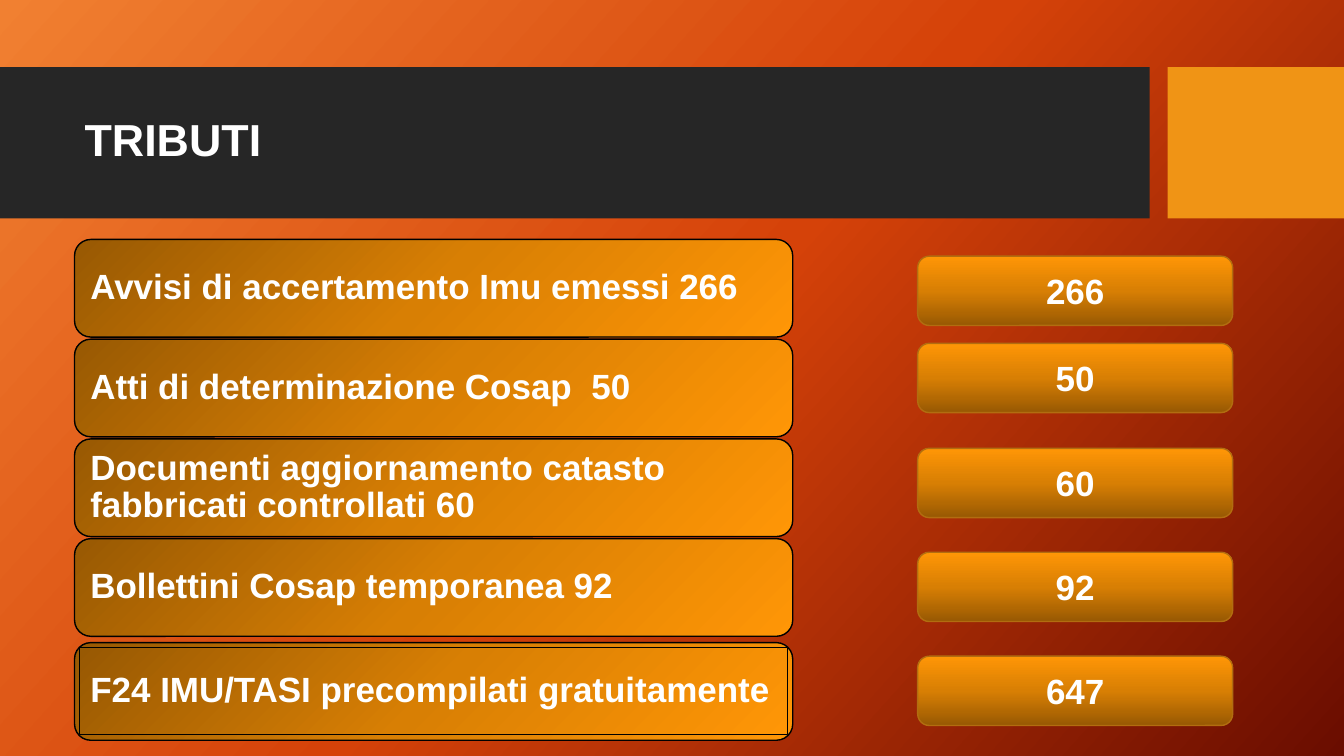
from lxml import etree
from pptx import Presentation
from pptx.dml.color import RGBColor
from pptx.enum.shapes import MSO_SHAPE
from pptx.enum.text import MSO_ANCHOR, MSO_AUTO_SIZE, PP_ALIGN
from pptx.oxml.ns import qn
from pptx.util import Pt

PX = 9525
RECTANGLE, ROUNDED = MSO_SHAPE.RECTANGLE, MSO_SHAPE.ROUNDED_RECTANGLE
LEFT, CENTER, MIDDLE = PP_ALIGN.LEFT, PP_ALIGN.CENTER, MSO_ANCHOR.MIDDLE
NO_AUTOFIT = MSO_AUTO_SIZE.NONE

FONT = "Arial"
WHITE = RGBColor(0xFF, 0xFF, 0xFF)
BLACK = RGBColor(0x00, 0x00, 0x00)
CHARCOAL = RGBColor(0x26, 0x26, 0x26)
ORANGE = RGBColor(0xF0, 0x94, 0x15)
BRONZE = RGBColor(0xB2, 0x6D, 0x10)
AMBER_STOPS = (RGBColor(0x98, 0x59, 0x03), RGBColor(0xD8, 0x7F, 0x04), RGBColor(0xFF, 0x96, 0x06))
FIRE_STOPS = (RGBColor(0xF1, 0x80, 0x31), RGBColor(0xD5, 0x42, 0x09), RGBColor(0x6A, 0x0D, 0x00))

LABELS = (
    "Avvisi di accertamento Imu emessi 266",
    "Atti di determinazione Cosap\t 50",
    "Documenti aggiornamento catasto fabbricati controllati 60",
    "Bollettini Cosap temporanea 92",
)
FORM_LABEL = "F24 IMU/TASI precompilati gratuitamente"
COUNTS = ((244, "266"), (327, "50"), (427, "60"), (526, "92"), (625, "647"))
CARD_LEFT, CARD_TOP, CARD_WIDTH, CARD_HEIGHT, CARD_STEP = 71, 228, 684, 93, 95
FORM_TOP = 612
INNER_MARGIN, TEXT_INSET, TAB_SIZE = 5, 10, 117


def emu(*lengths):
    """Turn px lengths into EMU."""
    return [length * PX for length in lengths]


def set_gradient(fill, element, colors, angle=None):
    """Spread colors evenly, along an angle or outwards from the top left corner."""
    fill.gradient()
    gradient = element.find(".//" + qn("a:gradFill"))
    for child in list(gradient):
        gradient.remove(child)
    stops = etree.SubElement(gradient, qn("a:gsLst"))
    for index, color in enumerate(colors):
        position = 100000 * index // (len(colors) - 1)
        stop = etree.SubElement(stops, qn("a:gs"), pos=str(position))
        etree.SubElement(stop, qn("a:srgbClr"), val=str(color))
    if angle is None:
        radial = etree.SubElement(gradient, qn("a:path"), path="circle")
        etree.SubElement(radial, qn("a:fillToRect"), r="100000", b="100000")
    else:
        etree.SubElement(gradient, qn("a:lin"), ang=str(angle * 60000), scaled="0")


def write_text(shape, text, size, alignment, line_spacing=1.0):
    """Put bold white text in the vertical middle of a shape."""
    frame = shape.text_frame
    frame.text = text
    frame.word_wrap = True
    frame.auto_size = NO_AUTOFIT
    frame.vertical_anchor = MIDDLE
    paragraph = frame.paragraphs[0]
    paragraph.alignment = alignment
    paragraph.line_spacing = line_spacing
    font = paragraph.runs[0].font
    font.name, font.size, font.bold = FONT, Pt(size), True
    font.color.rgb = WHITE


def add_block(slide, kind, box, color):
    """Add a plain filled shape without outline or shadow."""
    shape = slide.shapes.add_shape(kind, *emu(*box))
    shape.shadow.inherit = False
    shape.fill.solid()
    shape.fill.fore_color.rgb = color
    shape.line.fill.background()
    return shape


def add_amber_block(slide, kind, box, line_color, line_width=1, angle=None):
    """Add an outlined shape with the amber gradient."""
    shape = add_block(slide, kind, box, ORANGE)
    set_gradient(shape.fill, shape.element, AMBER_STOPS, angle)
    shape.line.color.rgb = line_color
    shape.line.width = Pt(line_width)
    return shape


def add_header(slide, box, text):
    """Draw the dark band, its accent block and the title."""
    left, top, width, height = box
    band_width, accent_width = 1095, 168
    add_block(slide, RECTANGLE, (left, top, band_width, height), CHARCOAL)
    accent_left = left + width - accent_width
    add_block(slide, RECTANGLE, (accent_left, top, accent_width, height), ORANGE)
    title = slide.shapes.title
    title.element.getparent().append(title.element)
    title.left, title.top, title.width, title.height = emu(left + 71, top + 15, 1009, 113)
    write_text(title, text, 32, LEFT, 0.9)


def add_card(slide, box, text, framed=False):
    """Draw a rounded label card with its text area, optionally framed."""
    left, top, width, height = box
    add_amber_block(slide, ROUNDED, box, BLACK)
    inner = (left + INNER_MARGIN, top + INNER_MARGIN,
             width - 2 * INNER_MARGIN, height - 2 * INNER_MARGIN)
    if framed:
        area = add_amber_block(slide, RECTANGLE, inner, BLACK, 0.75)
    else:
        area = slide.shapes.add_textbox(*emu(*inner))
    write_text(area, text, 25, LEFT, 0.9)
    frame = area.text_frame
    frame.margin_left = frame.margin_right = TEXT_INSET * PX
    frame.margin_top = frame.margin_bottom = TEXT_INSET * PX
    properties = frame.paragraphs[0]._p.get_or_add_pPr()
    properties.set("defTabSz", str(TAB_SIZE * PX))


def add_count(slide, box, text):
    """Draw a rounded button with a centred figure."""
    button = add_amber_block(slide, ROUNDED, box, BRONZE, angle=270)
    write_text(button, text, 25, CENTER)


def build_taxes_slide(presentation):
    """Build the slide of tax activities and their counts."""
    slide = presentation.slides.add_slide(presentation.slide_layouts[5])
    set_gradient(slide.background.fill, slide.element, FIRE_STOPS, 42)
    add_header(slide, (0, 64, 1280, 144), "TRIBUTI")
    for index, label in enumerate(LABELS):
        top = CARD_TOP + index * CARD_STEP
        add_card(slide, (CARD_LEFT, top, CARD_WIDTH, CARD_HEIGHT), label)
    add_card(slide, (CARD_LEFT, FORM_TOP, CARD_WIDTH, CARD_HEIGHT), FORM_LABEL, framed=True)
    for top, count in COUNTS:
        add_count(slide, (874, top, 300, 66), count)


def main():
    """Create and save the presentation."""
    presentation = Presentation()
    presentation.slide_width, presentation.slide_height = emu(1280, 720)
    build_taxes_slide(presentation)
    presentation.save("out.pptx")


if __name__ == "__main__":
    main()
